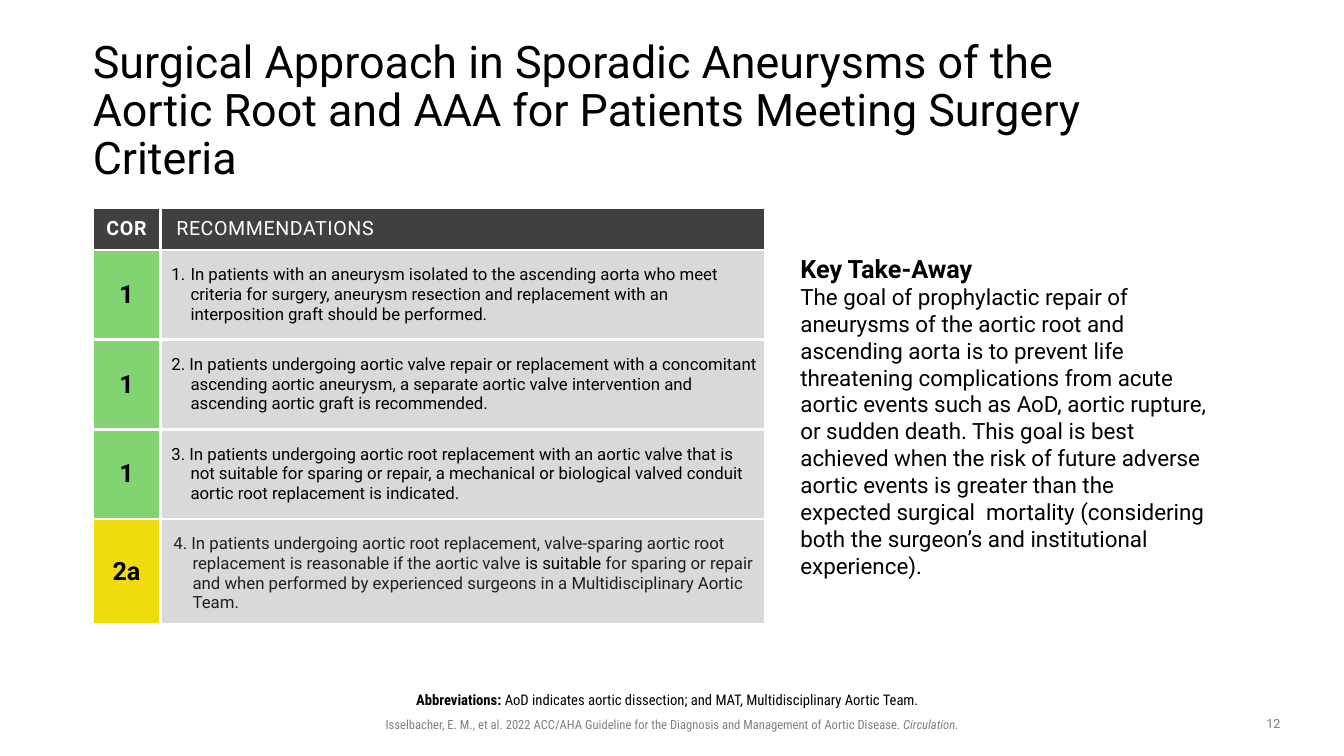
from pptx import Presentation
from pptx.dml.color import RGBColor
from pptx.enum.text import MSO_ANCHOR as Anchor, PP_ALIGN as Align
from pptx.oxml import parse_xml
from pptx.oxml.ns import nsdecls
from pptx.util import Inches, Pt

DARK, GREY, GREEN, YELLOW = "404040", "D9D9D9", "82D472", "F0DB0E"
BLACK, WHITE, INK, PALE = "000000", "FFFFFF", "231F20", "808080"


def write(par, runs, size, color=BLACK, font="Roboto", align=Align.LEFT, left=0, hang=0):
    """Fill a paragraph with (text, changes) runs."""
    par.alignment = align
    props = par._p.get_or_add_pPr()
    props.set("marL", str(Inches(left)))
    props.set("indent", str(Inches(hang)))
    for text, look in runs:
        run = par.add_run()
        run.text = text
        run.font.name = font
        run.font.size = Pt(size)
        run.font.bold = look.get("bold", False)
        run.font.italic = look.get("italic", False)
        run.font.color.rgb = RGBColor.from_string(look.get("color", color))
        if "space" in look:
            run._r.get_or_add_rPr().set("spc", str(look["space"]))


def box(left, top, width, height):
    frame = slide.shapes.add_textbox(*map(Inches, (left, top, width, height))).text_frame
    frame.word_wrap = True
    return frame


deck = Presentation()
deck.slide_width, deck.slide_height = Inches(13.33), Inches(7.5)
slide = deck.slides.add_slide(deck.slide_layouts[6])

# Source line
source = box(1.81, 7.06, 9.71, 0.25)
write(source.paragraphs[0], [
    ("Isselbacher, E. M., et al. 2022 ACC/AHA Guideline for the Diagnosis and "
     "Management of Aortic Disease. ", {}),
    ("Circulation.", {"italic": True}),
], 9, PALE, "Roboto Condensed", Align.CENTER)

# Title
title = box(0.92, 0.4, 10.78, 1.42)
title.margin_left = title.margin_right = title.margin_top = title.margin_bottom = 0
title.vertical_anchor = Anchor.MIDDLE
write(title.paragraphs[0], [
    ("Surgical Approach in Sporadic Aneurysms of the Aortic Root and AAA for "
     "Patients Meeting Surgery Criteria", {}),
], 32)
title.paragraphs[0].line_spacing = 0.9

# Recommendations: class, fill, runs
advice = [
    ("1", GREEN, [
        ("1.\tIn patients with an aneurysm isolated to the ascending aorta who meet "
         "criteria for surgery, aneurysm resection and replacement with an "
         "interposition graft should be performed.", {})]),
    ("1", GREEN, [
        ("2. In patients undergoing aortic valve repair or replacement with a "
         "concomitant ascending aortic aneurysm, a separate aortic valve "
         "intervention and ascending aortic graft is recommended.", {})]),
    ("1", GREEN, [
        ("3. In patients undergoing aortic root replacement with an aortic valve that "
         "is not suitable for sparing or repair, a mechanical or biological valved "
         "conduit aortic root replacement is indicated.", {})]),
    ("2a", YELLOW, [
        ("4. In patients undergoing aortic root replacement, valve-sparing aortic root "
         "replacement is reasonable if the aortic valve ", {"color": INK}),
        ("is suitable ", {}),
        ("for sparing or repair and when performed by experienced surgeons in a "
         "Multidisciplinary Aortic Team.", {"color": INK})]),
]

# Table
table = slide.shapes.add_table(
    len(advice) + 1, 2, Inches(0.92), Inches(2.06), Inches(6.67), Inches(4.12)).table
table.horz_banding = False
for col, width in zip(table.columns, (0.67, 6)):
    col.width = Inches(width)
for row, height in zip(table.rows, (0.42, 0.89, 0.89, 0.89, 1.05)):
    row.height = Inches(height)

# Header row
write(table.cell(0, 0).text_frame.paragraphs[0],
      [("COR", {"bold": True, "space": 50})], 14, WHITE, align=Align.CENTER)
write(table.cell(0, 1).text_frame.paragraphs[0],
      [("RECOMMENDATIONS", {"space": 40})], 14, WHITE, left=0.06)

# Body rows
for num, (rank, fill, runs) in enumerate(advice, 1):
    mark, body = table.cell(num, 0), table.cell(num, 1)
    last = num == len(advice)
    write(mark.text_frame.paragraphs[0], [(rank, {"bold": True})], 18, align=Align.CENTER)
    write(body.text_frame.paragraphs[0], runs, 12, left=0.32 if last else 0.25, hang=-0.19)
    for cell in (mark, body):
        cell.margin_left = cell.margin_right = Inches(0.05)
        cell.margin_top = cell.margin_bottom = Inches(0.05)
    if last:
        body.margin_left = body.margin_right = body.margin_bottom = 0
        body.margin_top = Inches(0.03)
    else:
        body.text_frame.paragraphs[0].space_after = Pt(6)

# Cell fills and borders
fills = [(DARK, DARK)] + [(fill, GREY) for _, fill, _ in advice]
for row, pair in zip(table.rows, fills):
    for cell, fill in zip(row.cells, pair):
        cell.vertical_anchor = Anchor.MIDDLE
        cell.fill.solid()
        cell.fill.fore_color.rgb = RGBColor.from_string(fill)
        props = cell._tc.get_or_add_tcPr()
        for spot, side in enumerate(("lnL", "lnR", "lnT", "lnB")):
            props.insert(spot, parse_xml(
                f'<a:{side} {nsdecls("a")} w="{Pt(2.25)}"><a:solidFill>'
                f'<a:srgbClr val="{WHITE}"/></a:solidFill></a:{side}>'))

# Key take-away
key = box(7.84, 2.46, 4.26, 3.37)
write(key.paragraphs[0], [("Key Take-Away", {"bold": True})], 18)
write(key.add_paragraph(), [
    ("The goal of prophylactic repair of aneurysms of the aortic root and ascending "
     "aorta is to prevent life threatening complications from acute aortic events such "
     "as AoD, aortic rupture, or sudden death. This goal is best achieved when the risk "
     "of future adverse aortic events is greater than the expected surgical  mortality "
     "(considering both the surgeon’s and institutional experience).", {}),
], 16)

# Abbreviations
abbr = box(2.86, 6.82, 7.62, 0.26)
abbr.margin_left = 0
write(abbr.paragraphs[0], [
    ("Abbreviations: ", {"bold": True}),
    ("AoD indicates aortic dissection; and MAT, Multidisciplinary Aortic Team.", {}),
], 10.5, font="Roboto Condensed", align=Align.CENTER, left=0.25, hang=-0.25)
abbr.paragraphs[0].line_spacing = 0.9

# Page number
page = box(12.42, 7.05, 0.42, 0.26)
write(page.paragraphs[0], [("12", {})], 9, PALE, align=Align.CENTER)

deck.save("out.pptx")
